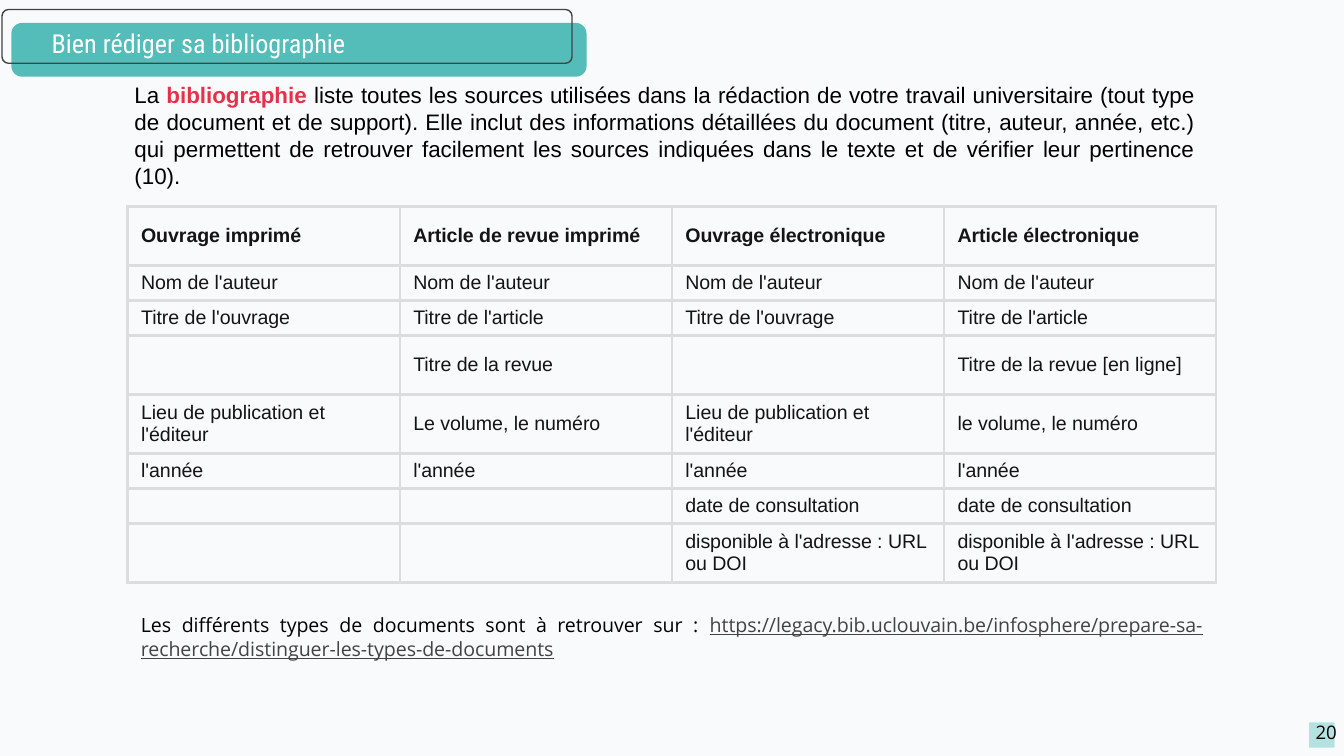
from lxml import etree
from pptx import Presentation
from pptx import util as u
from pptx.dml.color import RGBColor
from pptx.enum import shapes, text
from pptx.oxml import ns

COLORS = {
    "page": "F8FAFB", "teal": "54BCB9", "mint": "B4E2E1", "slate": "434343",
    "white": "FFFFFF", "black": "000000", "accent": "E7314B",
    "ink": "141414", "grid": "DDDDDD",
}
LINK = ("https://legacy.bib.uclouvain.be/infosphere/prepare-sa-recherche/"
        "distinguer-les-types-de-documents")
REFERENCES = [
    ["Ouvrage imprimé", "Article de revue imprimé",
     "Ouvrage électronique", "Article électronique"],
    ["Nom de l'auteur"] * 4,
    ["Titre de l'ouvrage", "Titre de l'article"] * 2,
    ["", "Titre de la revue", "", "Titre de la revue [en ligne]"],
    ["Lieu de publication et l'éditeur", "Le volume, le numéro",
     "Lieu de publication et l'éditeur", "le volume, le numéro"],
    ["l'année"] * 4,
    ["", "", "date de consultation", "date de consultation"],
    ["", "", "disponible à l'adresse : URL ou DOI", "disponible à l'adresse : URL ou DOI"],
]
TALL_ROWS = {0, 3, 4, 7}


def color(name):
    return RGBColor.from_string(COLORS[name])


def within(box, left, top, width, height):
    x, y, w, h = box
    return (int(x + w * left / 100), int(y + h * top / 100),
            int(w * width / 100), int(h * height / 100))


def place(item, box):
    item.left, item.top, item.width, item.height = box


def add_run(paragraph, words, size, face, ink, bold=False, underline=False):
    run = paragraph.add_run()
    run.text = words
    font = run.font
    font.size, font.name, font.bold = u.Pt(size), face, bold
    font.underline = underline
    font.color.rgb = color(ink)


def set_frame(frame, anchor, inset_x=0.1, inset_y=0.1):
    frame.word_wrap = True
    frame.auto_size = text.MSO_AUTO_SIZE.NONE
    frame.vertical_anchor = anchor
    frame.margin_left = frame.margin_right = u.Inches(inset_x)
    frame.margin_top = frame.margin_bottom = u.Inches(inset_y)
    return frame.paragraphs[0]


def add_panel(slide, box, corner, fill=None, line=None):
    panel = slide.shapes.add_shape(shapes.MSO_SHAPE.ROUNDED_RECTANGLE, *box)
    panel.adjustments[0] = corner
    panel.shadow.inherit = False
    if fill:
        panel.fill.solid()
        panel.fill.fore_color.rgb = color(fill)
    else:
        panel.fill.background()
    if line:
        panel.line.color.rgb = color(line)
        panel.line.width = u.Pt(0.75)
    else:
        panel.line.fill.background()


def add_header(slide, box):
    add_panel(slide, within(box, 1.6, 20, 98.4, 80), 0.2, fill="teal")
    add_panel(slide, within(box, 0, 0, 97.5, 80), 0.12, line="slate")
    heading = slide.shapes.title
    slide.shapes._spTree.append(heading._element)
    place(heading, within(box, 6.2, 14, 91, 72))
    paragraph = set_frame(heading.text_frame, text.MSO_ANCHOR.MIDDLE)
    paragraph.alignment = text.PP_ALIGN.LEFT
    add_run(paragraph, "Bien rédiger sa bibliographie", 14, "Roboto Condensed", "white")


def add_introduction(slide, box):
    introduction = slide.placeholders[1]
    place(introduction, box)
    paragraph = set_frame(introduction.text_frame, text.MSO_ANCHOR.TOP, inset_y=0)
    paragraph.alignment = text.PP_ALIGN.JUSTIFY
    paragraph.line_spacing = 1.0
    paragraph.space_before = u.Pt(0)
    add_run(paragraph, "La ", 12, "Arial", "black")
    add_run(paragraph, "bibliographie", 12, "Arial", "accent", bold=True)
    add_run(paragraph, " liste toutes les sources utilisées dans la rédaction de votre "
            "travail universitaire (tout type de document et de support). Elle inclut des "
            "informations détaillées du document (titre, auteur, année, etc.) qui permettent "
            "de retrouver facilement les sources indiquées dans le texte et de vérifier leur "
            "pertinence (10).", 12, "Arial", "black")


def set_borders(cell):
    properties = cell._tc.get_or_add_tcPr()
    for position, side in enumerate(("lnL", "lnR", "lnT", "lnB")):
        border = etree.Element(ns.qn(f"a:{side}"), w=str(u.Pt(1.5)))
        fill = etree.SubElement(border, ns.qn("a:solidFill"))
        etree.SubElement(fill, ns.qn("a:srgbClr"), val=COLORS["grid"])
        properties.insert(position, border)


def add_references(slide, box):
    columns = len(REFERENCES[0])
    table = slide.shapes.add_table(len(REFERENCES), columns, *box).table
    table.first_row = table.horz_banding = False
    for column in table.columns:
        column.width = box[2] // columns
    for r, entries in enumerate(REFERENCES):
        table.rows[r].height = u.Inches(0.44 if r in TALL_ROWS else 0.26)
        for c, entry in enumerate(entries):
            cell = table.cell(r, c)
            cell.fill.background()
            cell.vertical_anchor = text.MSO_ANCHOR.MIDDLE
            cell.margin_left = cell.margin_right = u.Inches(0.1)
            cell.margin_top = cell.margin_bottom = u.Inches(0.04)
            paragraph = cell.text_frame.paragraphs[0]
            if entry:
                add_run(paragraph, entry, 10.5, "Arial", "ink", bold=r == 0)
            else:
                etree.SubElement(paragraph._p, ns.qn("a:endParaRPr"), sz="1050")
            set_borders(cell)


def add_source_note(slide, box):
    note = slide.shapes.add_textbox(*box)
    paragraph = set_frame(note.text_frame, text.MSO_ANCHOR.TOP, inset_y=0.05)
    paragraph.alignment = text.PP_ALIGN.JUSTIFY
    add_run(paragraph, "Les différents types de documents sont à retrouver sur : ",
            10.5, "Open Sans", "black")
    add_run(paragraph, LINK, 10.5, "Open Sans", "slate", underline=True)


def add_page_number(slide, box):
    add_panel(slide, within(box, 10, 22, 38, 70), 0.04, fill="mint")
    number = slide.shapes.add_textbox(*box)
    paragraph = set_frame(number.text_frame, text.MSO_ANCHOR.TOP, inset_y=0.05)
    add_run(paragraph, "20", 10, "Open Sans", "black")


def main():
    deck = Presentation()
    deck.slide_width = u.Inches(10)
    deck.slide_height = deck.slide_width * 9 // 16
    page = (0, 0, deck.slide_width, deck.slide_height)
    slide = deck.slides.add_slide(deck.slide_layouts[0])
    slide.background.fill.solid()
    slide.background.fill.fore_color.rgb = color("page")
    add_page_number(slide, within(page, 96.9, 94.5, 5, 4.8))
    add_header(slide, within(page, 0.15, 1.25, 43.5, 8.9))
    add_introduction(slide, within(page, 9, 10.75, 81, 54.8))
    add_references(slide, within(page, 9.5, 27.3, 81, 49.8))
    add_source_note(slide, within(page, 9.5, 80.25, 81, 8.4))
    deck.save("out.pptx")


if __name__ == "__main__":
    main()
